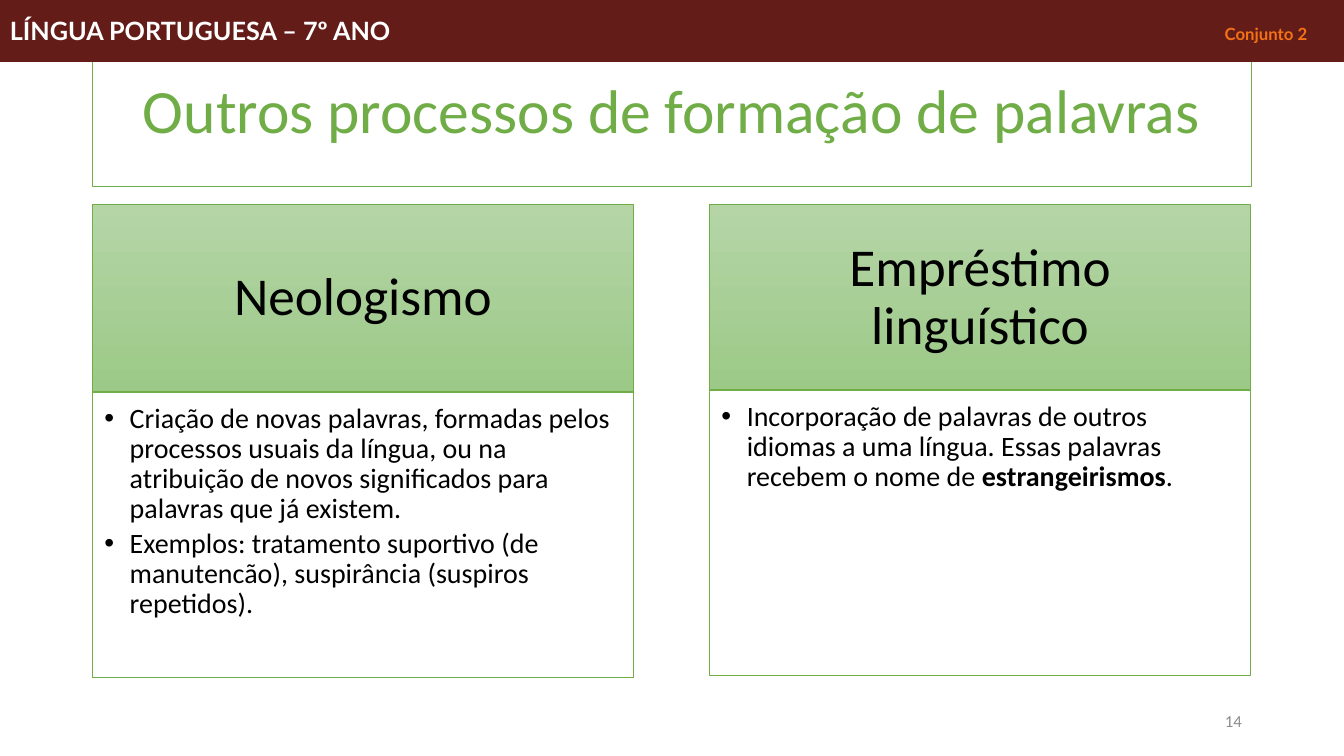
"""Build the slide on neologisms and linguistic loans."""
import pptx
import pptx.dml.color
import pptx.enum.shapes
import pptx.enum.text
import pptx.oxml
import pptx.oxml.ns
import pptx.util
from pptx.util import Cm, Pt

RGBColor = pptx.dml.color.RGBColor
ALIGN = pptx.enum.text.PP_ALIGN
ANCHOR = pptx.enum.text.MSO_ANCHOR

GREEN = RGBColor(0x70, 0xAD, 0x47)
LIGHT_GREEN = RGBColor(0xB5, 0xD5, 0xA7)
MID_GREEN = RGBColor(0x9C, 0xC9, 0x87)
MAROON = RGBColor(0x63, 0x1C, 0x18)
ORANGE = RGBColor(0xF4, 0x71, 0x16)
GRAY = RGBColor(0x8C, 0x8C, 0x8C)
WHITE = RGBColor(0xFF, 0xFF, 0xFF)
BLACK = RGBColor(0, 0, 0)

MARGIN, COLUMN_WIDTH, COLUMN_STEP = 2.33, 13.64, 15.55
HEADING_TOP, HEADING_HEIGHT, BODY_HEIGHT = 5.16, 4.72, 7.2
BULLET_INDENT = Cm(0.64)

COLUMNS = [
    ("Neologismo", 9.88, [
        [("Criação de novas palavras, formadas pelos processos usuais da língua, "
          "ou na atribuição de novos significados para palavras que já existem.", False)],
        [("Exemplos: tratamento suportivo (de manutencão), suspirância "
          "(suspiros repetidos).", False)],
    ]),
    ("Empréstimo linguístico", 9.83, [
        [("Incorporação de palavras de outros idiomas a uma língua. Essas palavras "
          "recebem o nome de ", False), ("estrangeirismos", True), (".", False)],
    ]),
]


def add_box(left, top, width, height, fill, line, line_width, anchor):
    box = page.shapes.add_shape(pptx.enum.shapes.MSO_SHAPE.RECTANGLE,
                                Cm(left), Cm(top), Cm(width), Cm(height))
    box.shadow.inherit = False
    box.fill.solid()
    box.fill.fore_color.rgb = fill
    box.line.color.rgb = line
    box.line.width = Pt(line_width)
    box.text_frame.word_wrap = True
    box.text_frame.vertical_anchor = anchor
    return box


def style_paragraph(para, size, color, align, font="Calibri", spacing=0.9):
    para.alignment = align
    para.line_spacing = spacing
    para.font.name = font
    para.font.size = Pt(size)
    para.font.color.rgb = color


deck = pptx.Presentation()
deck.slide_width, deck.slide_height = Cm(33.87), Cm(19.05)
page = deck.slides.add_slide(deck.slide_layouts[6])

number_box = page.shapes.add_textbox(Cm(23.93), Cm(17.65), Cm(7.62), Cm(1.02))
number_box.text_frame.word_wrap = True
number_box.text_frame.vertical_anchor = ANCHOR.MIDDLE
para = number_box.text_frame.paragraphs[0]
para.text = "14"
style_paragraph(para, 12, GRAY, ALIGN.RIGHT, spacing=1.0)

for index, (heading, body_top, bullets) in enumerate(COLUMNS):
    left = MARGIN + index * COLUMN_STEP

    heading_box = add_box(left, HEADING_TOP, COLUMN_WIDTH, HEADING_HEIGHT,
                          LIGHT_GREEN, GREEN, 0.5, ANCHOR.MIDDLE)
    heading_box.fill.gradient()
    heading_box.fill.gradient_angle = 270
    for stop, color in zip(heading_box.fill.gradient_stops, (LIGHT_GREEN, MID_GREEN)):
        stop.color.rgb = color
    frame = heading_box.text_frame
    frame.margin_left = frame.margin_right = Cm(0.75)
    frame.margin_top = frame.margin_bottom = Cm(0.43)
    para = frame.paragraphs[0]
    para.text = heading
    style_paragraph(para, 38, BLACK, ALIGN.CENTER)

    body_box = add_box(left, body_top, COLUMN_WIDTH, BODY_HEIGHT,
                       WHITE, GREEN, 1, ANCHOR.TOP)
    frame = body_box.text_frame
    frame.margin_left = frame.margin_top = Cm(0.3)
    frame.margin_right, frame.margin_bottom = Cm(0.4), Cm(0.43)
    for position, spans in enumerate(bullets):
        para = frame.add_paragraph() if position else frame.paragraphs[0]
        properties = para._p.get_or_add_pPr()
        properties.set("marL", str(BULLET_INDENT))
        properties.set("indent", str(-BULLET_INDENT))
        namespace = pptx.oxml.ns.nsdecls("a")
        for bullet_part in (f'<a:buFont {namespace} typeface="Arial"/>',
                            f'<a:buChar {namespace} char="•"/>'):
            properties.append(pptx.oxml.parse_xml(bullet_part))
        style_paragraph(para, 20, BLACK, ALIGN.LEFT)
        para.space_after = Pt(3)
        for text, bold in spans:
            span = para.add_run()
            span.text = text
            span.font.bold = bold

title_box = add_box(MARGIN, 1.02, 29.21, 3.68, WHITE, GREEN, 1, ANCHOR.MIDDLE)
para = title_box.text_frame.paragraphs[0]
para.text = "Outros processos de formação de palavras"
style_paragraph(para, 44, GREEN, ALIGN.CENTER)

header_bar = add_box(0, 0, 33.87, 1.55, MAROON, MAROON, 0.75, ANCHOR.MIDDLE)
para = header_bar.text_frame.paragraphs[0]
properties = para._p.get_or_add_pPr()
properties.append(pptx.oxml.parse_xml(
    f'<a:tabLst {pptx.oxml.ns.nsdecls("a")}><a:tab pos="{Cm(32.7)}" algn="r"/></a:tabLst>'))
style_paragraph(para, 18, WHITE, ALIGN.LEFT, "Lato", 1.0)
para.font.bold = True
for text, size, color in (("LÍNGUA PORTUGUESA – 7º ANO\t", 18, WHITE),
                          ("Conjunto 2", 12, ORANGE)):
    span = para.add_run()
    span.text = text
    span.font.size = Pt(size)
    span.font.color.rgb = color

deck.save("out.pptx")
